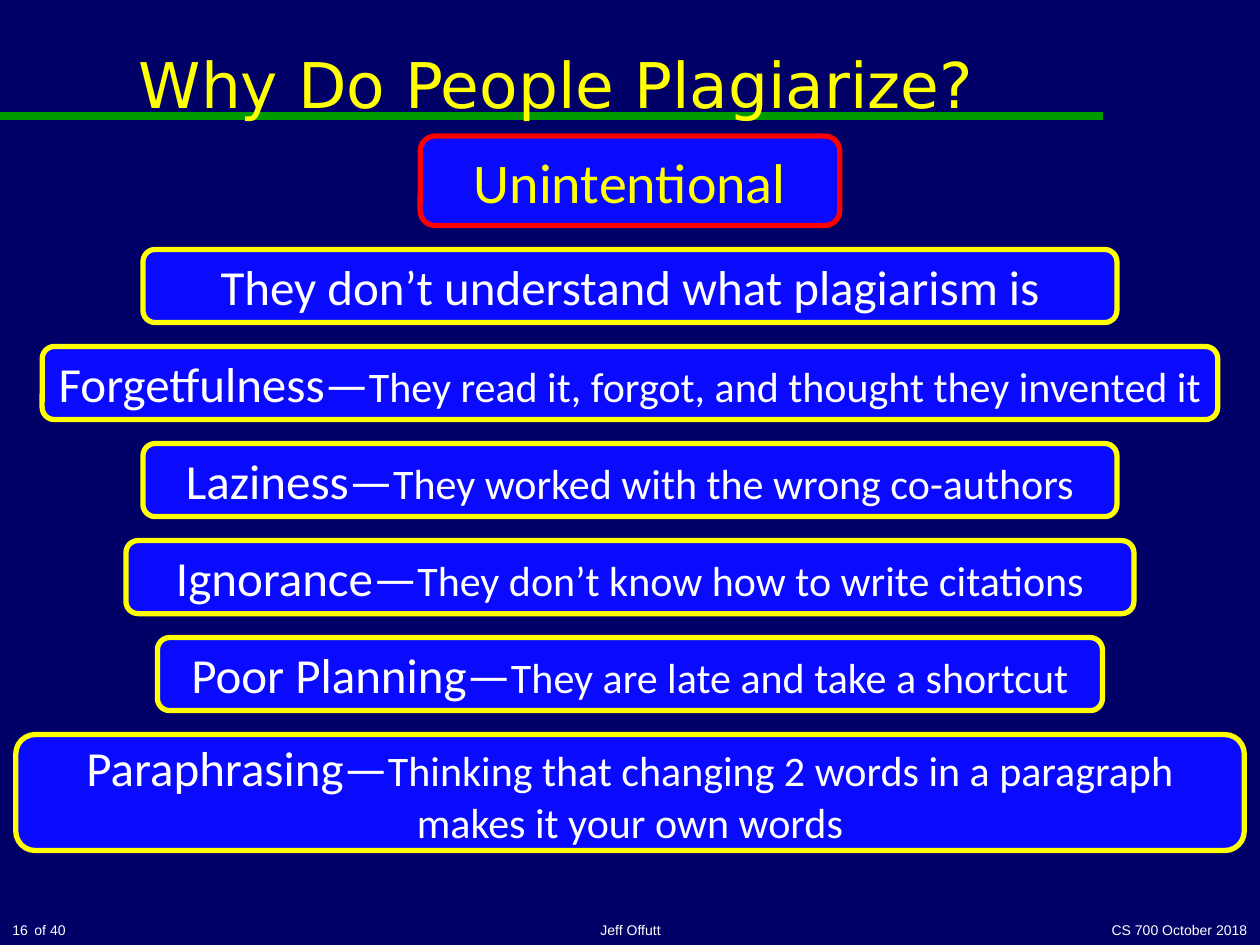
from pptx import Presentation
from pptx.dml.color import RGBColor
from pptx.enum.shapes import MSO_CONNECTOR, MSO_SHAPE
from pptx.enum.text import MSO_ANCHOR, PP_ALIGN
from pptx.oxml.ns import qn
from pptx.util import Inches, Pt
from lxml import etree

COLORS = {
    "background": "000066",
    "rule": "009900",
    "box": "0A0AFF",
    "accent": "FFFF00",
    "heading_border": "FF0000",
    "text": "FFFFFF",
}
SLIDE_WIDTH = 10
FIRST_REASON_TOP = 1.98
REASON_PITCH = 0.77
REASON_HEIGHT = 0.58

# Lead words, explanation, box width, box height
REASONS = [
    ("They don’t understand what plagiarism is", "", 7.73, REASON_HEIGHT),
    ("Forgetfulness—", "They read it, forgot, and thought they invented it", 9.33, REASON_HEIGHT),
    ("Laziness—", "They worked with the wrong co-authors", 7.73, REASON_HEIGHT),
    ("Ignorance—", "They don’t know how to write citations", 8, REASON_HEIGHT),
    ("Poor Planning—", "They are late and take a shortcut", 7.5, REASON_HEIGHT),
    ("Paraphrasing—", "Thinking that changing 2 words in a paragraph makes it your own words", 9.75, 0.92),
]


def color(name):
    return RGBColor.from_string(COLORS[name])


def write_text(shape, runs, font="Calibri", fill="text", align=PP_ALIGN.CENTER,
               anchor=MSO_ANCHOR.MIDDLE, wrap=True):
    """Fill a shape with one paragraph made of (text, size) runs."""
    frame = shape.text_frame
    frame.word_wrap = wrap
    frame.vertical_anchor = anchor
    paragraph = frame.paragraphs[0]
    paragraph.alignment = align
    for text, size in runs:
        run = paragraph.add_run()
        run.text = text
        run.font.name = font
        run.font.size = Pt(size)
        run.font.color.rgb = color(fill)


class SlideBuilder:
    def __init__(self, slide):
        self.slide = slide
        slide.background.fill.solid()
        slide.background.fill.fore_color.rgb = color("background")

    def rule(self, left, right, top):
        line = self.slide.shapes.add_connector(
            MSO_CONNECTOR.STRAIGHT, Inches(left), Inches(top), Inches(right), Inches(top))
        line.line.color.rgb = color("rule")
        line.line.width = Pt(4.5)
        etree.SubElement(line._element.spPr, qn("a:effectLst"))

    def title(self, text, left, top, width, height):
        title = self.slide.shapes.title
        title.left, title.top = Inches(left), Inches(top)
        title.width, title.height = Inches(width), Inches(height)
        write_text(title, [(text, 36)], font="DejaVu Sans", fill="accent")

    def footer(self, text, left, top, width, height, align, wrap=True):
        box = self.slide.shapes.add_textbox(
            Inches(left), Inches(top), Inches(width), Inches(height))
        write_text(box, [(text, 8)], font="Arial", align=align,
                   anchor=MSO_ANCHOR.BOTTOM, wrap=wrap)

    def centered_box(self, runs, top, width, height, border="accent", fill="text"):
        box = self.slide.shapes.add_shape(
            MSO_SHAPE.ROUNDED_RECTANGLE, Inches((SLIDE_WIDTH - width) / 2),
            Inches(top), Inches(width), Inches(height))
        box.shadow.inherit = False
        box.fill.solid()
        box.fill.fore_color.rgb = color("box")
        box.line.color.rgb = color(border)
        box.line.width = Pt(3)
        write_text(box, runs, fill=fill)


def main():
    presentation = Presentation()
    presentation.slide_width = Inches(SLIDE_WIDTH)
    presentation.slide_height = Inches(7.5)
    builder = SlideBuilder(presentation.slides.add_slide(presentation.slide_layouts[5]))

    builder.title("Why Do People Plagiarize?", 0.08, 0, 8.67, 1.33)
    builder.rule(0, 8.75, 0.92)
    # The rule runs behind the title.
    shape_tree = builder.slide.shapes._spTree
    shape_tree.append(builder.slide.shapes.title._element)

    builder.centered_box([("Unintentional", 32)], 1.08, 3.33, 0.71,
                         border="heading_border", fill="accent")
    for index, (lead, explanation, width, height) in enumerate(REASONS):
        runs = [(lead, 28)]
        if explanation:
            runs.append((explanation, 24))
        builder.centered_box(runs, FIRST_REASON_TOP + index * REASON_PITCH, width, height)

    builder.footer("16", 0, 7.17, 1.75, 0.33, PP_ALIGN.LEFT)
    builder.footer("of 40", 0.17, 7.26, 0.45, 0.24, PP_ALIGN.RIGHT, wrap=False)
    builder.footer("Jeff Offutt", 3.42, 7.17, 3.17, 0.33, PP_ALIGN.CENTER)
    builder.footer("CS 700 October 2018", 7.92, 7.17, 2.08, 0.33, PP_ALIGN.RIGHT)

    presentation.save("out.pptx")


if __name__ == "__main__":
    main()
